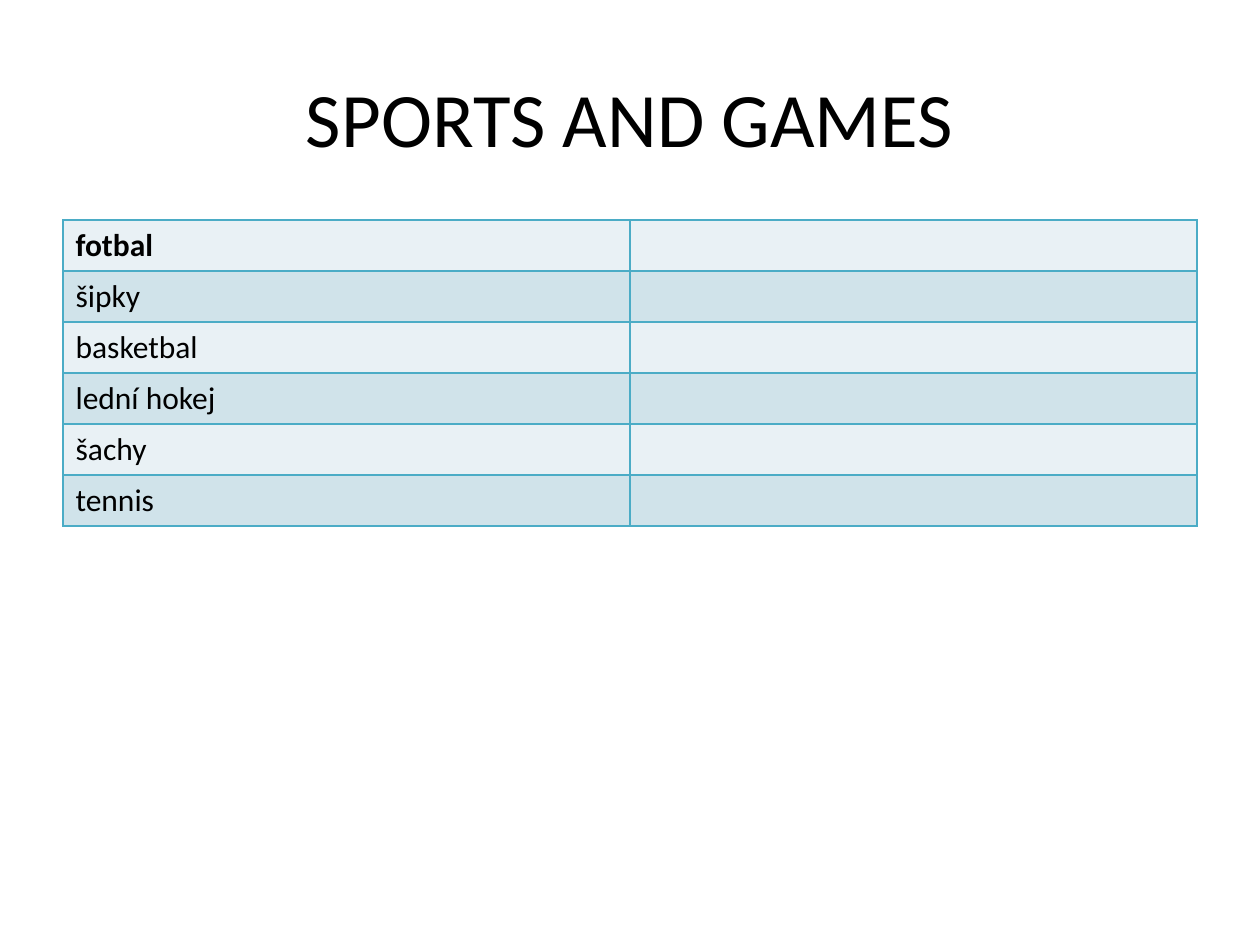
from lxml.etree import SubElement
from pptx import Presentation
from pptx.dml.color import RGBColor
from pptx.enum.text import MSO_ANCHOR as Anchor, PP_ALIGN as Align
from pptx.oxml.ns import qn
from pptx.util import Emu, Pt

EMU_PER_INCH = 914400
PX_PER_INCH = 126
COLORS = {
    "text": "000000",
    "border": "4BACC6",
    "light_row": "E9F1F5",
    "dark_row": "D0E3EA",
}
SPORTS = ["fotbal", "šipky", "basketbal", "lední hokej", "šachy", "tennis"]


def px(value):
    return Emu(round(value * EMU_PER_INCH / PX_PER_INCH))


class SlideBuilder:
    font_name = "Calibri"

    def __init__(self, slide):
        self.slide = slide

    def format_text(self, paragraph, size, bold=False):
        for run in paragraph.runs:
            run.font.name = self.font_name
            run.font.size = Pt(size)
            run.font.bold = bold
            run.font.color.rgb = RGBColor.from_string(COLORS["text"])

    def title(self, text, left, top, width, height):
        shape = self.slide.shapes.add_textbox(px(left), px(top), px(width), px(height))
        text_frame = shape.text_frame
        text_frame.word_wrap = True
        text_frame.vertical_anchor = Anchor.MIDDLE
        text_frame.text = text
        paragraph = text_frame.paragraphs[0]
        paragraph.alignment = Align.CENTER
        self.format_text(paragraph, 44)

    def cell_border(self, cell):
        properties = cell._tc.get_or_add_tcPr()
        for side in ("lnL", "lnR", "lnT", "lnB"):
            line = SubElement(properties, qn(f"a:{side}"), w=str(Pt(1)))
            fill = SubElement(line, qn("a:solidFill"))
            SubElement(fill, qn("a:srgbClr"), val=COLORS["border"])

    def word_table(self, words, left, top, width, row_height):
        shape = self.slide.shapes.add_table(
            len(words), 2, px(left), px(top), px(width), px(row_height * len(words))
        )
        table = shape.table
        for index, (row, word) in enumerate(zip(table.rows, words)):
            row.height = px(row_height)
            fill_color = COLORS["dark_row" if index % 2 else "light_row"]
            for cell in row.cells:
                self.cell_border(cell)
                cell.fill.solid()
                cell.fill.fore_color.rgb = RGBColor.from_string(fill_color)
            text_frame = row.cells[0].text_frame
            text_frame.text = word
            self.format_text(text_frame.paragraphs[0], 18, bold=index == 0)


def main():
    presentation = Presentation()
    presentation.slide_width = px(1260)
    presentation.slide_height = px(945)
    slide = presentation.slides.add_slide(presentation.slide_layouts[6])
    builder = SlideBuilder(slide)
    builder.title("SPORTS AND GAMES", 63, 38, 1134, 158)
    builder.word_table(SPORTS, 63, 220, 1134, 51)
    presentation.save("out.pptx")


if __name__ == "__main__":
    main()
